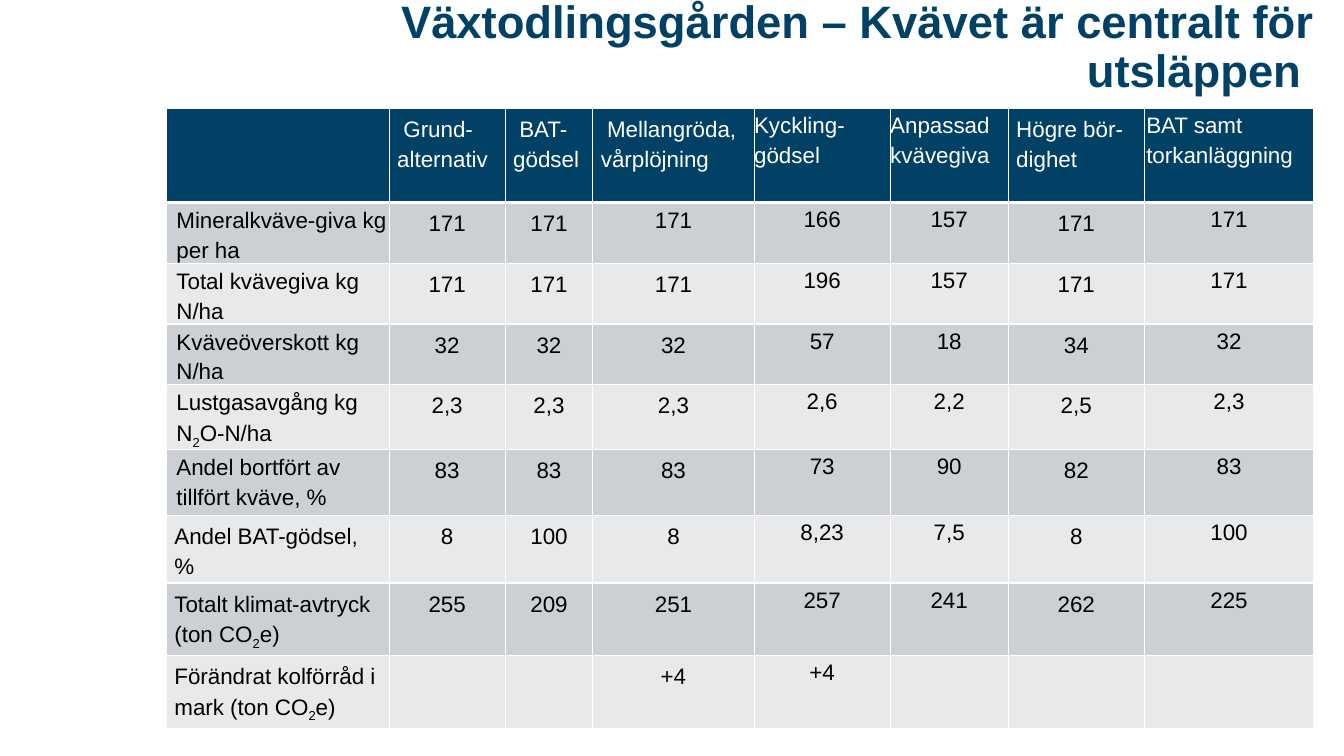
from dataclasses import dataclass

from lxml.etree import SubElement
from pptx import Presentation
from pptx.dml.color import RGBColor
from pptx.enum.text import MSO_ANCHOR, MSO_AUTO_SIZE, PP_ALIGN
from pptx.oxml.ns import qn
from pptx.util import Inches, Pt

COLORS = {"navy": "004165", "white": "FFFFFF", "black": "000000",
          "odd_row": "CCCFD3", "even_row": "E7E9EA"}
FONT = "Arial"
NORMAL = (0.08, 0.04, 0.08, 0.04)
TIGHT = (0.01, 0.01, 0.01, 0)
FLUSH = (0, 0, 0, 0)


@dataclass
class Column:
    heading: str
    width: float
    margins: tuple = NORMAL
    indent: float = 0


@dataclass
class Measure:
    label: str
    values: str
    height: float
    margins: tuple = NORMAL
    indent: float = 0


COLUMNS = [
    Column("", 2.21),
    Column(" Grund- alternativ", 1.15),
    Column(" BAT-gödsel", 0.87),
    Column(" Mellangröda, vårplöjning", 1.6),
    Column("Kyckling-gödsel", 1.35, FLUSH),
    Column("Anpassad kvävegiva", 1.17, FLUSH),
    Column("Högre bör- dighet", 1.35),
    Column("BAT samt torkanläggning", 1.68, FLUSH, 0.02),
]
HEADER_HEIGHT = 0.93
# The mark ₂ in a label is set as a lowered figure two.
MEASURES = [
    Measure("Mineralkväve-giva kg per ha", "171|171|171|166|157|171|171", 0.59, TIGHT, 0.09),
    Measure("Total kvävegiva kg N/ha", "171|171|171|196|157|171|171", 0.59, TIGHT, 0.09),
    Measure("Kväveöverskott kg N/ha", "32|32|32|57|18|34|32", 0.59, TIGHT, 0.09),
    Measure("Lustgasavgång kg N₂O-N/ha", "2,3|2,3|2,3|2,6|2,2|2,5|2,3", 0.64, TIGHT, 0.09),
    Measure("Andel bortfört av tillfört kväve, %", "83|83|83|73|90|82|83", 0.65, TIGHT, 0.09),
    Measure("Andel BAT-gödsel, %", "8|100|8|8,23|7,5|8|100", 0.67),
    Measure("Totalt klimat-avtryck (ton CO₂e)", "255|209|251|257|241|262|225", 0.72),
    Measure("Förändrat kolförråd i mark (ton CO₂e)", "||+4|+4|||", 0.72),
]


def color(name: str) -> RGBColor:
    return RGBColor.from_string(COLORS[name])


def add_borders(cell, bottom: float, top: float) -> None:
    properties = cell._tc.get_or_add_tcPr()
    for side, width in (("lnL", 1), ("lnR", 1), ("lnT", top), ("lnB", bottom)):
        line = SubElement(properties, qn(f"a:{side}"), w=str(Pt(width)))
        fill = SubElement(line, qn("a:solidFill"))
        SubElement(fill, qn("a:srgbClr"), val=COLORS["white"])


def fill_cell(cell, text: str, fill: str, ink: str, margins: tuple,
              align: PP_ALIGN = PP_ALIGN.LEFT, indent: float = 0) -> None:
    cell.fill.solid()
    cell.fill.fore_color.rgb = color(fill)
    (cell.margin_left, cell.margin_top,
     cell.margin_right, cell.margin_bottom) = map(Inches, margins)
    cell.vertical_anchor = MSO_ANCHOR.TOP
    para = cell.text_frame.paragraphs[0]
    before, lowered, after = text.partition("₂")
    for part, baseline in ((before, 0), (lowered and "2", -25000), (after, 0)):
        if part:
            span = para.add_run()
            span.text = part
            if baseline:
                span.font._element.set("baseline", str(baseline))
    para.alignment = align
    para.line_spacing = 1.2
    if indent:
        paragraph_properties = para._p.get_or_add_pPr()
        paragraph_properties.set("marL", str(Inches(indent)))
        paragraph_properties.set("indent", "0")
    para.font.name = FONT
    para.font.size = Pt(16)
    para.font.bold = False
    para.font.color.rgb = color(ink)


def add_title(page) -> None:
    title = page.shapes.title
    title.left, title.top = Inches(1.76), Inches(0.15)
    title.width, title.height = Inches(11.37), Inches(0.65)
    frame = title.text_frame
    frame.text = "Växtodlingsgården – Kvävet är centralt för utsläppen "
    frame.word_wrap = True
    frame.auto_size = MSO_AUTO_SIZE.NONE
    frame.vertical_anchor = MSO_ANCHOR.MIDDLE
    para = frame.paragraphs[0]
    para.alignment = PP_ALIGN.RIGHT
    para.line_spacing = 0.9
    para.font.name = FONT
    para.font.size = Pt(32.4)
    para.font.bold = True
    para.font.color.rgb = color("navy")


def add_nitrogen_table(page) -> None:
    heights = [HEADER_HEIGHT] + [measure.height for measure in MEASURES]
    table = page.shapes.add_table(
        len(heights), len(COLUMNS), Inches(1.65), Inches(1.08),
        Inches(sum(column.width for column in COLUMNS)), Inches(sum(heights))).table
    table.first_row = table.horz_banding = False
    for row, height in zip(table.rows, heights):
        row.height = Inches(height)
    for index, column in enumerate(COLUMNS):
        table.columns[index].width = Inches(column.width)
        cell = table.cell(0, index)
        add_borders(cell, bottom=3, top=1)
        fill_cell(cell, column.heading, "navy", "white", column.margins, indent=column.indent)
    for number, measure in enumerate(MEASURES, start=1):
        fill = "odd_row" if number % 2 else "even_row"
        for index, text in enumerate([measure.label] + measure.values.split("|")):
            cell = table.cell(number, index)
            add_borders(cell, bottom=1, top=3 if number == 1 else 1)
            if index == 0:
                fill_cell(cell, text, fill, "black", measure.margins, indent=measure.indent)
            else:
                margins = TIGHT if (number, index) == (1, 3) else COLUMNS[index].margins
                fill_cell(cell, text, fill, "black", margins, PP_ALIGN.CENTER)


def main() -> None:
    deck = Presentation()
    deck.slide_width, deck.slide_height = Inches(13.33), Inches(7.5)
    page = deck.slides.add_slide(deck.slide_layouts[5])
    add_title(page)
    add_nitrogen_table(page)
    deck.save("out.pptx")


if __name__ == "__main__":
    main()
